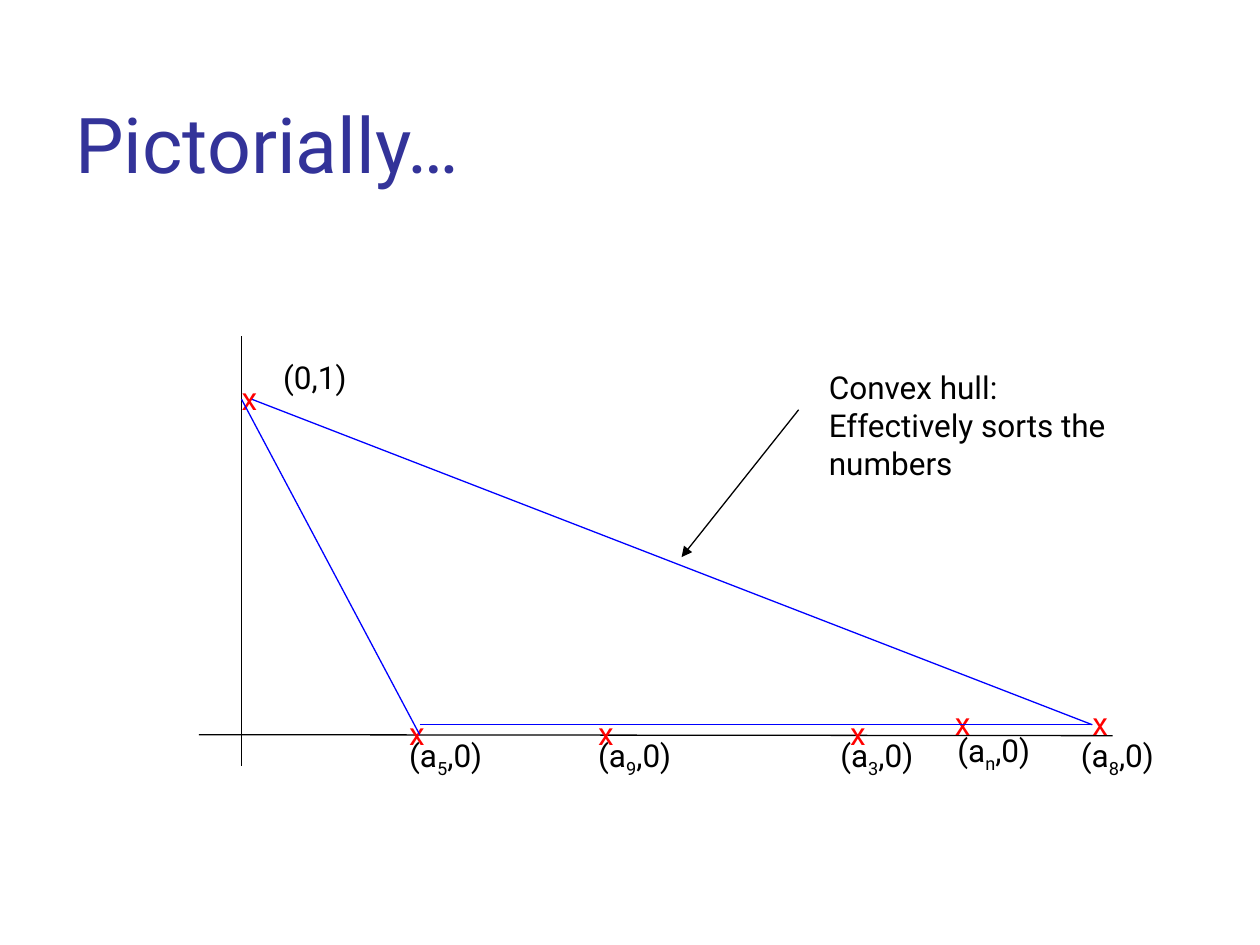
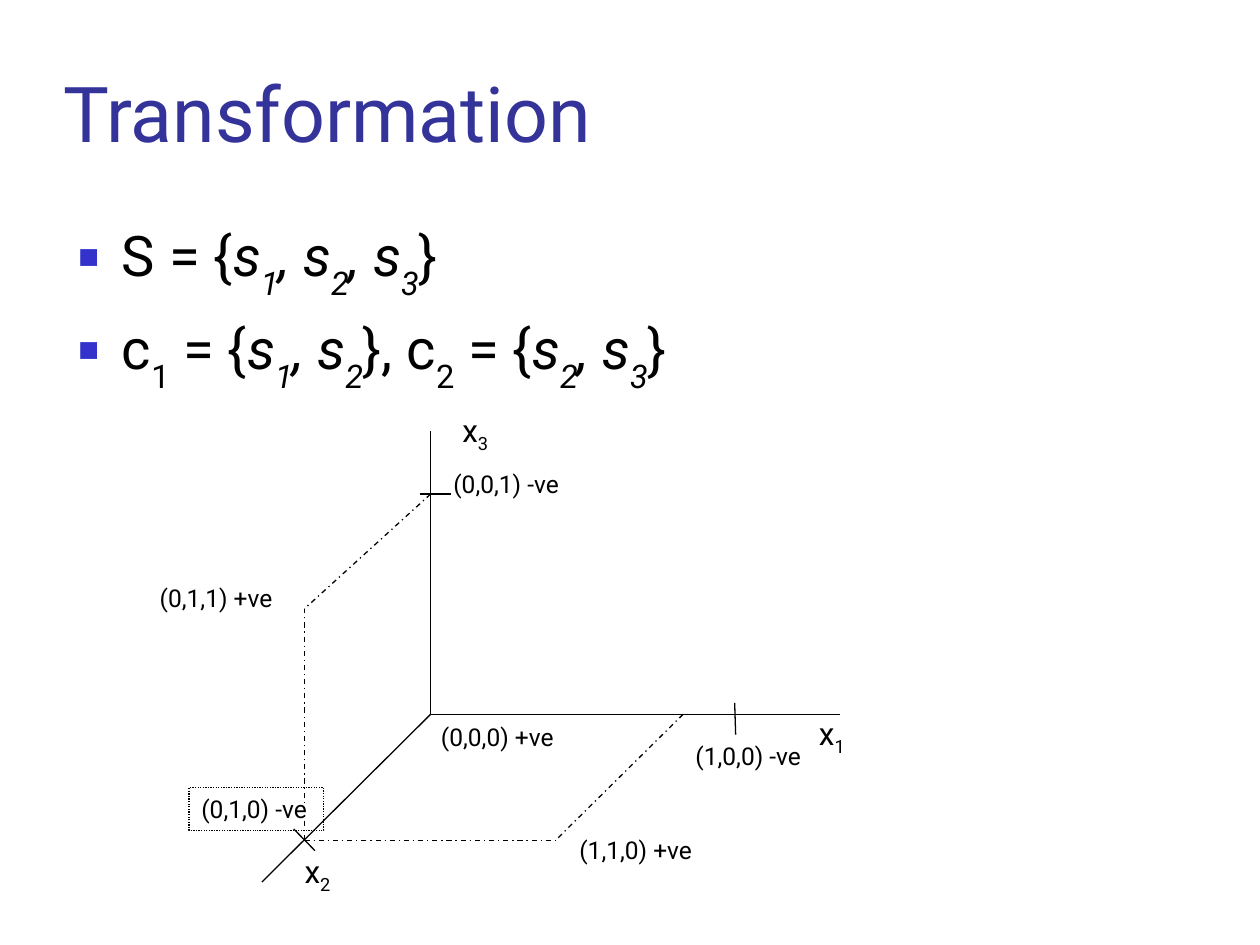
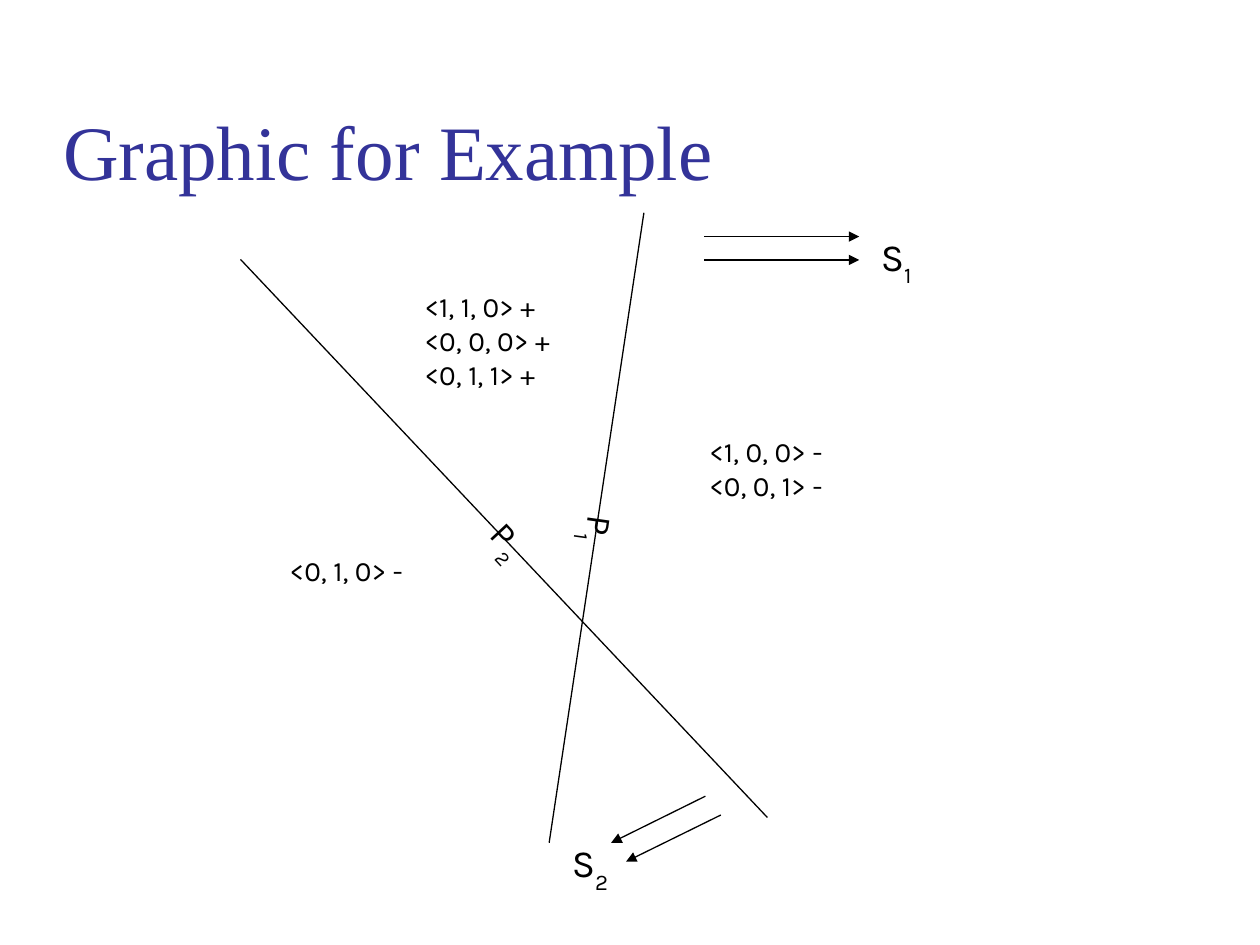
from lxml import etree
from pptx import Presentation
from pptx.dml.color import RGBColor
from pptx.enum.dml import MSO_LINE as DASH
from pptx.enum.shapes import MSO_CONNECTOR as CONN
from pptx.enum.text import MSO_ANCHOR as ANCHOR, MSO_AUTO_SIZE as AUTO, PP_ALIGN as ALIGN
from pptx.oxml.ns import qn
from pptx.util import Cm, Pt

BLACK = RGBColor(0, 0, 0)
RED = RGBColor(0xFF, 0, 0)
BLUE = RGBColor(0, 0, 0xFF)
TITLE_COLOR = RGBColor(0x33, 0x33, 0x99)
BULLET_COLOR = RGBColor(0x33, 0x33, 0xCC)

TITLE_BOX = (1.27, 0.76, 22.86, 3.18)
WIDE_INSETS = (0.25, 0.13)
SLIM_INSETS = (0.23, 0.1)
NO_INSETS = (0, 0)


def split_markup(text):
    """Yield (text, italic, subscript): *...* is italic, _ lowers the next character."""
    for i, part in enumerate(text.split("*")):
        first, *rest = part.split("_")
        pieces = [(first, False)]
        for piece in rest:
            pieces += [(piece[0], True), (piece[1:], False)]
        for piece, lowered in pieces:
            if piece:
                yield piece, i % 2 == 1, lowered


class Deck:
    def __init__(self):
        self.prs = Presentation()
        self.prs.slide_width, self.prs.slide_height = Cm(25.4), Cm(19.05)

    def new_slide(self, title, box=TITLE_BOX, title_font="Roboto", title_insets=NO_INSETS,
                  font="Roboto", size=18, insets=WIDE_INSETS, drop=-25, spacing=None, wrap=False):
        """Start a slide and set the text style used on it."""
        self.font, self.size, self.insets = font, size, insets
        self.drop, self.spacing, self.wrap = drop, spacing, wrap
        self.s = self.prs.slides.add_slide(self.prs.slide_layouts[5])
        sp = self.s.shapes.title
        sp.left, sp.top, sp.width, sp.height = map(Cm, box)
        tf = sp.text_frame
        tf.text = title
        tf.vertical_anchor = ANCHOR.BOTTOM
        tf.auto_size = AUTO.NONE
        self.set_insets(tf, title_insets)
        p = tf.paragraphs[0]
        p.alignment = ALIGN.LEFT
        if spacing:
            p.line_spacing = spacing
        self.format_run(p.runs[0], 44, TITLE_COLOR, title_font)

    def set_insets(self, tf, insets):
        tf.margin_left = tf.margin_right = Cm(insets[0])
        tf.margin_top = tf.margin_bottom = Cm(insets[1])

    def format_run(self, r, size, color, font):
        r.font.size, r.font.name = Pt(size), font
        r.font.color.rgb = color

    def text(self, box, *lines, size=None, color=BLACK, wrap=None, insets=None, drop=None):
        sp = self.s.shapes.add_textbox(*map(Cm, box))
        tf = sp.text_frame
        tf.word_wrap = self.wrap if wrap is None else wrap
        tf.auto_size = AUTO.SHAPE_TO_FIT_TEXT
        self.set_insets(tf, insets or self.insets)
        for i, line in enumerate(lines):
            p = tf.add_paragraph() if i else tf.paragraphs[0]
            if self.spacing:
                p.line_spacing = self.spacing
            for piece, italic, lowered in split_markup(line):
                r = p.add_run()
                r.text = piece
                self.format_run(r, size or self.size, color, self.font)
                if italic:
                    r.font.italic = True
                if lowered:
                    r._r.get_or_add_rPr().set("baseline", str((drop or self.drop) * 1000))
        return sp

    def bullets(self, box, *lines):
        sp = self.text(box, *lines, size=32, wrap=True, insets=NO_INSETS, drop=-33)
        for p in sp.text_frame.paragraphs:
            p.space_before = Pt(7)
            pPr = p._p.get_or_add_pPr()
            pPr.set("marL", str(Cm(1.19)))
            pPr.set("indent", str(-Cm(0.89)))
            color = etree.SubElement(pPr, qn("a:buClr"))
            etree.SubElement(color, qn("a:srgbClr"), val=str(BULLET_COLOR))
            etree.SubElement(pPr, qn("a:buSzPct"), val="52000")
            etree.SubElement(pPr, qn("a:buChar"), char="■")

    def turned_text(self, box, text, angle):
        sp = self.text(box, text, size=20)
        sp.rotation = angle
        sp.text_frame.vertical_anchor = ANCHOR.MIDDLE
        sp.text_frame.paragraphs[0].alignment = ALIGN.CENTER

    def line(self, start, end, color=BLACK, dash=None, arrow=False):
        c = self.s.shapes.add_connector(CONN.STRAIGHT, *map(Cm, start + end))
        c.line.color.rgb, c.line.width = color, Pt(0.75)
        if dash:
            c.line.dash_style = dash
        if arrow:
            etree.SubElement(c.line._get_or_add_ln(), qn("a:tailEnd"), type="triangle")
        etree.SubElement(c._element.spPr, qn("a:effectLst"))


def hull_slide(deck):
    deck.new_slide("Pictorially…", title_insets=WIDE_INSETS)
    deck.line((4.87, 6.78), (4.87, 15.44))
    deck.line((4.01, 14.81), (22.43, 14.83))

    for x, y in ((4.62, 7.52), (8, 14.27), (11.81, 14.27), (16.89, 14.27),
                 (21.77, 14.07), (19, 14.07)):
        deck.text((x, y, 0.81, 1.02), "x", color=RED)
    for index, x, y in (("5", 8, 14.71), ("9", 11.81, 14.71), ("3", 16.69, 14.71),
                        ("8", 21.54, 14.71), ("n", 19.05, 14.61)):
        deck.text((x, y, 2.01, 1.12), f"(a_{index},0)")

    right = (22.02, 14.61)
    for start, end in (((4.87, 8.05), (8.46, 14.81)), ((8.46, 14.61), right),
                       ((5.08, 8.05), right)):
        deck.line(start, end, BLUE)
    deck.text((5.46, 7.09, 1.8, 1.02), "(0,1)")
    deck.line((16.1, 8.26), (13.74, 11.23), arrow=True)
    deck.text((16.46, 7.29, 6.17, 2.54), "Convex hull:", "Effectively sorts the", "numbers")


def transformation_slide(deck):
    deck.new_slide("Transformation", box=(1.27, 1.3, 22.86, 1.88))
    deck.bullets((1.27, 4.45, 22.05, 3.56),
                 "S = {*s_1, s_2, s_3*}",
                 "c_1 = {*s_1, s_2*}, c_2 = {*s_2, s_3*}")

    origin = (8.68, 14.4)
    for axis_end in ((8.68, 8.69), (16.94, 14.4), (5.28, 17.78)):
        deck.line(origin, axis_end)
    for label, x, y in (("x_1", 16.26, 14.27), ("x_2", 5.89, 17.04), ("x_3", 9.07, 8.15)):
        deck.text((x, y, 1.2, 1.12), label, wrap=True)

    for start, end in (((14.81, 14.17), (14.83, 14.81)), ((8.46, 9.96), (9.09, 9.96)),
                       ((5.92, 16.71), (6.35, 17.15))):
        deck.line(start, end)

    on_x2, on_x3 = (6.14, 16.94), (8.68, 9.96)
    corner_12, corner_23 = (11.2, 16.94), (6.14, 12.27)
    for start, end in (((13.77, 14.4), corner_12), (on_x2, corner_12),
                       (on_x2, corner_23), (on_x3, corner_23)):
        deck.line(start, end, dash=DASH.DASH_DOT)

    for label, x, y, width in (("(0,0,0) +ve", 8.64, 14.43, 2.84),
                               ("(0,0,1) -ve", 8.89, 9.32, 2.84),
                               ("(1,0,0) -ve", 13.77, 14.81, 2.72),
                               ("(1,1,0) +ve", 11.43, 16.71, 2.84),
                               ("(0,1,1) +ve", 2.97, 11.63, 2.84)):
        deck.text((x, y, width, 0.86), label, size=14)
    framed = deck.text((3.81, 15.88, 2.72, 0.86), "(0,1,0) -ve", size=14)
    framed.line.color.rgb, framed.line.width = BLACK, Pt(0.75)
    framed.line.dash_style = DASH.ROUND_DOT


def example_slide(deck):
    deck.new_slide("Graphic for Example", title_font="Times New Roman", font="Karla", size=16,
                   insets=SLIM_INSETS, drop=-33, spacing=1.02, wrap=True)
    deck.line((12.98, 4.29), (11.07, 16.99))
    deck.turned_text((5.61, 10.03, 12.85, 1.27), "P_1", 98)
    deck.line((4.85, 5.23), (15.47, 16.48))
    deck.turned_text((2.44, 10.31, 15.44, 1.09), " P_2", 47)

    deck.text((8.33, 5.72, 3.18, 4.47), "<1, 1, 0> +", "<0, 0, 0> +", "<0, 1, 1> +")
    deck.text((14.07, 8.64, 3.2, 1.63), "<1, 0, 0> -", "<0, 0, 1> -")
    deck.text((5.61, 11.05, 3.61, 0.94), "<0, 1, 0> -")

    for start, end in (((14.22, 16.05), (12.32, 16.99)), ((14.53, 16.43), (12.62, 17.37)),
                       ((14.2, 5.24), (17.32, 5.24)), ((14.2, 4.77), (17.32, 4.77))):
        deck.line(start, end, arrow=True)
    deck.text((17.53, 4.57, 2.29, 1.37), "S_1", size=22)
    deck.text((11.3, 16.79, 2.29, 1.37), "S_2", size=22)


def main():
    deck = Deck()
    hull_slide(deck)
    transformation_slide(deck)
    example_slide(deck)
    deck.prs.save("out.pptx")


if __name__ == "__main__":
    main()
